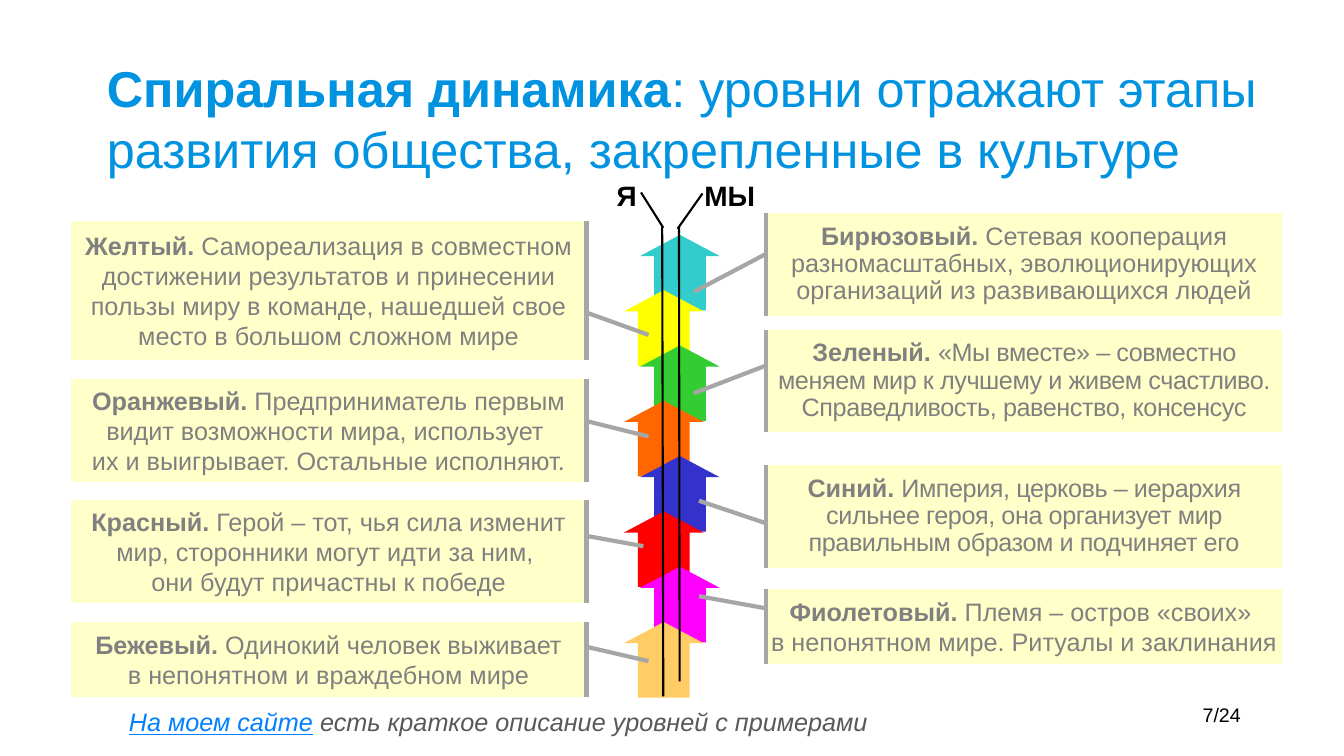
from dataclasses import dataclass

from lxml.etree import SubElement
from pptx import Presentation
from pptx.dml.color import RGBColor
from pptx.enum.shapes import MSO_CONNECTOR, MSO_SHAPE
from pptx.enum.text import MSO_ANCHOR, MSO_AUTO_SIZE, PP_ALIGN
from pptx.oxml.ns import qn
from pptx.util import Pt


@dataclass(frozen=True)
class Theme:
    font: str = "Arial"
    title: str = "0293E0"
    ink: str = "000000"
    note: str = "595959"
    link: str = "0080FF"
    card: str = "FFFFCA"
    card_text: str = "808080"
    callout: str = "A6A6A6"
    title_size: float = 36
    axis_size: float = 20
    body_size: float = 18
    number_size: float = 14


@dataclass(frozen=True)
class Span:
    text: str
    color: str
    bold: bool = False
    italic: bool = False
    underline: bool = False
    tracking: int = 0


@dataclass(frozen=True)
class Level:
    name: str
    meaning: str
    color: str
    top: float
    height: float
    pointer: tuple[float, float, float, float]
    line_spacing: float | None = None
    tracking: int = 0


@dataclass(frozen=True)
class Stroke:
    start: tuple[float, float]
    end: tuple[float, float]


THEME = Theme()
ARROW_TOP, ARROW_STEP = 167.76, 39.5
ARROW_LEFTS = (457.2, 445.68)
CARD_LEFTS = (547.2, 50.4)
CARD_WIDTH = 368.6

LEVELS = [
    Level("Бирюзовый.", "Сетевая кооперация разномасштабных, эволюционирующих "
          "организаций из развивающихся людей",
          "33CCCC", 152, 73.4, (0.4, 0, 0.77, -0.14), 0.9),
    Level("Желтый.", "Самореализация в совместном достижении результатов и принесении "
          "пользы миру в команде, нашедшей свое место в большом сложном мире",
          "FFFF00", 157.7, 99.4, (0.66, 1, 0.82, 1.12)),
    Level("Зеленый.", "«Мы вместе» – совместно меняем мир к лучшему и живем счастливо. "
          "Справедливость, равенство, консенсус",
          "33CC33", 235.4, 73.4, (0.35, 0, 0.62, -0.14), 0.9, -30),
    Level("Оранжевый.", "Предприниматель первым видит возможности мира, использует \n"
          "их и выигрывает. Остальные исполняют.",
          "FF6600", 270.7, 73.4, (0.41, 1, 0.56, 1.12)),
    Level("Синий.", "Империя, церковь – иерархия сильнее героя, она организует мир "
          "правильным образом и подчиняет его",
          "3333CC", 332, 73.4, (0.57, 0, 0.35, -0.13), 0.9, -30),
    Level("Красный.", "Герой – тот, чья сила изменит мир, сторонники могут идти за ним, \n"
          "они будут причастны к победе",
          "FF0000", 357.1, 73.4, (0.35, 1, 0.45, 1.11)),
    Level("Фиолетовый.", "Племя – остров «своих» \nв непонятном мире. Ритуалы и заклинания",
          "FF00FF", 420.5, 54, (0.26, 0, 0.1, -0.13)),
    Level("Бежевый.", "Одинокий человек выживает\nв непонятном и враждебном мире",
          "FFCC66", 444.2, 54, (0.33, 1, 0.52, 1.12)),
]

AXES = [
    Stroke((473, 162), (473.8, 497.5)),
    Stroke((485, 162), (485.5, 486.7)),
    Stroke((484, 163.4), (501.8, 138.2)),
    Stroke((473.8, 162.7), (457.9, 137.5)),
]


def write(shape, spans: list[Span], *, size: float, align=PP_ALIGN.LEFT,
          anchor=MSO_ANCHOR.TOP, inset: tuple[float, float] = (7.2, 3.6),
          wrap: bool = True, line_spacing: float | None = None) -> None:
    frame = shape.text_frame
    frame.word_wrap = wrap
    frame.auto_size = MSO_AUTO_SIZE.NONE
    frame.vertical_anchor = anchor
    frame.margin_left = frame.margin_right = Pt(inset[0])
    frame.margin_top = frame.margin_bottom = Pt(inset[1])
    paragraph = frame.paragraphs[0]
    paragraph.alignment = align
    if line_spacing:
        paragraph.line_spacing = line_spacing
    for span in spans:
        for index, line in enumerate(span.text.split("\n")):
            if index:
                paragraph.add_line_break()
            run = paragraph.add_run()
            run.text = line
            font = run.font
            font.name, font.size = THEME.font, Pt(size)
            font.bold, font.italic, font.underline = span.bold, span.italic, span.underline
            font.color.rgb = RGBColor.from_string(span.color)
            if span.tracking:
                run._r.get_or_add_rPr().set("spc", str(span.tracking))


def add_label(shapes, left: float, top: float, width: float, height: float,
              spans: list[Span], **text_format) -> None:
    label = shapes.add_textbox(Pt(left), Pt(top), Pt(width), Pt(height))
    write(label, spans, **text_format)


def add_filled(shapes, kind: MSO_SHAPE, left: float, top: float, width: float,
               height: float, color: str, adjustments: tuple[float, ...]):
    shape = shapes.add_shape(kind, Pt(left), Pt(top), Pt(width), Pt(height))
    shape.shadow.inherit = False
    shape.fill.solid()
    shape.fill.fore_color.rgb = RGBColor.from_string(color)
    shape.line.fill.background()
    for index, value in enumerate(adjustments):
        shape.adjustments[index] = value
    return shape


def add_stroke(shapes, stroke: Stroke) -> None:
    line = shapes.add_connector(MSO_CONNECTOR.STRAIGHT, *map(Pt, stroke.start + stroke.end))
    line.line.color.rgb = RGBColor.from_string(THEME.ink)
    line.line.width = Pt(1.5)
    SubElement(line._element.spPr, qn("a:effectLst"))


def add_card(shapes, level: Level, left: float) -> None:
    card = add_filled(shapes, MSO_SHAPE.LINE_CALLOUT_1_ACCENT_BAR, left, level.top,
                      CARD_WIDTH, level.height, THEME.card, level.pointer)
    card.line.color.rgb = RGBColor.from_string(THEME.callout)
    card.line.width = Pt(3)
    write(card, [Span(level.name + " ", THEME.card_text, bold=True),
                 Span(level.meaning, THEME.card_text, tracking=level.tracking)],
          size=THEME.body_size, align=PP_ALIGN.CENTER, anchor=MSO_ANCHOR.MIDDLE,
          inset=(2.88, 1.44), line_spacing=level.line_spacing)


def main() -> None:
    deck = Presentation()
    deck.slide_width, deck.slide_height = Pt(960), Pt(540)
    slide = deck.slides.add_slide(deck.slide_layouts[5])
    shapes = slide.shapes

    title = shapes.title
    title.left, title.top, title.width, title.height = Pt(69.1), Pt(37.4), Pt(842.4), Pt(53.3)
    write(title, [Span("Спиральная динамика", THEME.title, bold=True),
                  Span(": уровни отражают этапы развития общества, закрепленные в культуре",
                       THEME.title)], size=THEME.title_size)

    for index, level in enumerate(LEVELS):
        add_filled(shapes, MSO_SHAPE.UP_ARROW, ARROW_LEFTS[index % 2],
                   ARROW_TOP + index * ARROW_STEP, 56.9, 54, level.color, (0.65, 0.28))

    axes = shapes.add_group_shape().shapes
    for stroke in AXES:
        add_stroke(axes, stroke)
    for name, left, width in (("Я", 433.4, 23), ("МЫ", 496.1, 54.7)):
        add_label(axes, left, 123.8, width, 31.7, [Span(name, THEME.ink, bold=True)],
                  size=THEME.axis_size, wrap=False)

    add_label(shapes, 85, 501.1, 788.4, 28.8,
              [Span("На моем сайте", THEME.link, italic=True, underline=True),
               Span(" есть краткое описание уровней с примерами", THEME.note, italic=True)],
              size=THEME.body_size)

    for index, level in enumerate(LEVELS):
        add_card(shapes, level, CARD_LEFTS[index % 2])

    add_label(shapes, 789.8, 501.8, 103.7, 20.9, [Span("7/24", THEME.ink)],
              size=THEME.number_size, align=PP_ALIGN.RIGHT, anchor=MSO_ANCHOR.BOTTOM)
    deck.save("out.pptx")


if __name__ == "__main__":
    main()
